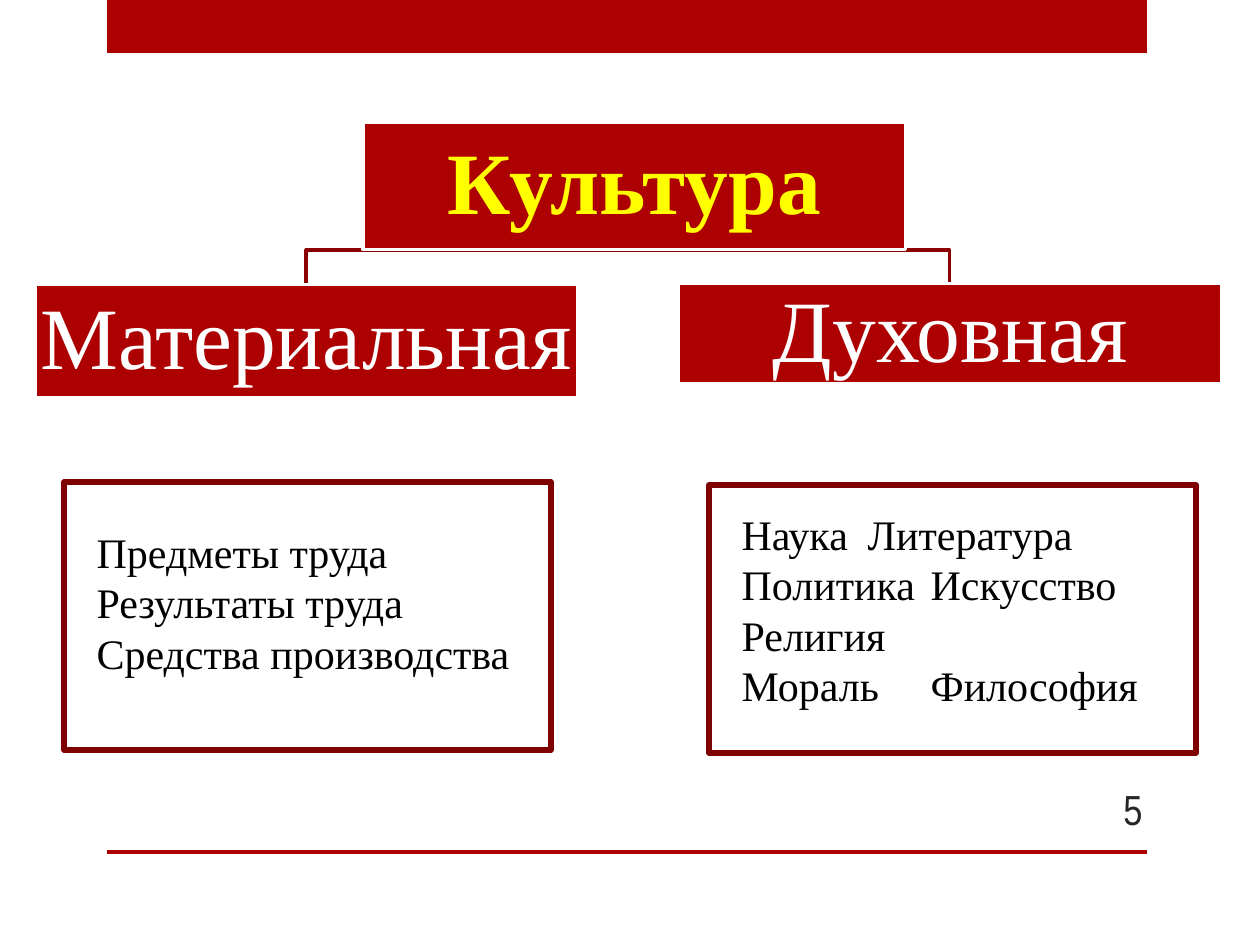
from dataclasses import dataclass
from typing import Optional

import lxml.etree
import pptx
import pptx.dml.color
import pptx.enum.shapes
import pptx.enum.text
import pptx.oxml.ns
import pptx.util

EMU_PER_PX = 914400 / 126
SERIF = "Times New Roman"
COLORS = {
    "red": "AD0101",
    "branch": "8B0101",
    "frame": "800101",
    "white": "FFFFFF",
    "yellow": "FFFF00",
    "black": "000000",
    "number": "262626",
}
ALIGN = pptx.enum.text.PP_ALIGN
ANCHOR = pptx.enum.text.MSO_ANCHOR


@dataclass(frozen=True)
class Box:
    left: int
    top: int
    width: int
    height: int

    @property
    def center(self) -> int:
        return self.left + self.width // 2

    @property
    def bottom(self) -> int:
        return self.top + self.height

    def emu(self) -> list[int]:
        return [px(v) for v in (self.left, self.top, self.width, self.height)]


@dataclass(frozen=True)
class Kind:
    """One kind of culture: its heading, the frame below and the list inside."""
    name: str
    heading: Box
    frame: Box
    listing: Box
    lines: tuple[str, ...]
    tabs: tuple[int, ...]  # one per line, 0 for a line without a tab


def px(value: int) -> int:
    return round(value * EMU_PER_PX)


def rgb(name: str) -> pptx.dml.color.RGBColor:
    return pptx.dml.color.RGBColor.from_string(COLORS[name])


def place(shape, box: Box) -> None:
    shape.left, shape.top, shape.width, shape.height = box.emu()


def paint(shape, fill: Optional[str] = None, line: Optional[str] = None,
          width: float = 1.75) -> None:
    if fill:
        shape.fill.solid()
        shape.fill.fore_color.rgb = rgb(fill)
    else:
        shape.fill.background()
    if line:
        shape.line.color.rgb = rgb(line)
        shape.line.width = pptx.util.Pt(width)
    else:
        shape.line.fill.background()


def add_rect(slide, box: Box, **look):
    rect = slide.shapes.add_shape(pptx.enum.shapes.MSO_SHAPE.RECTANGLE, *box.emu())
    rect.shadow.inherit = False
    paint(rect, **look)
    return rect


def write(shape, text: str, *, size: int = 24, font: str = SERIF, color: str = "black",
          bold: bool = False, align=ALIGN.LEFT, anchor=ANCHOR.TOP, spacing: float = 1.0,
          inset: Optional[int] = None, wrap: bool = True) -> None:
    frame = shape.text_frame
    frame.text = text
    frame.word_wrap = wrap
    frame.auto_size = pptx.enum.text.MSO_AUTO_SIZE.NONE
    frame.vertical_anchor = anchor
    if inset is not None:
        frame.margin_left = frame.margin_right = px(inset)
        frame.margin_top = frame.margin_bottom = px(inset)
    for paragraph in frame.paragraphs:
        paragraph.alignment = align
        paragraph.line_spacing = spacing
        paragraph.space_before = pptx.util.Pt(0)
        for run in paragraph.runs:
            run.font.size = pptx.util.Pt(size)
            run.font.name = font
            run.font.bold = bold
            run.font.color.rgb = rgb(color)


def write_heading(shape, text: str, color: str = "white", bold: bool = False) -> None:
    write(shape, text, size=50, color=color, bold=bold, align=ALIGN.CENTER,
          anchor=ANCHOR.MIDDLE, spacing=0.9, inset=4, wrap=False)


def set_plain_list(shape, tabs: tuple[int, ...]) -> None:
    """Remove bullets and indents, and set the tab stop of each line."""
    qn = pptx.oxml.ns.qn
    for paragraph, tab in zip(shape.text_frame.paragraphs, tabs):
        props = paragraph._p.get_or_add_pPr()
        props.set("marL", "0")
        props.set("indent", "0")
        lxml.etree.SubElement(props, qn("a:buNone"))
        if tab:
            stops = lxml.etree.SubElement(props, qn("a:tabLst"))
            lxml.etree.SubElement(stops, qn("a:tab"), pos=str(px(tab)), algn="l")


def add_branch(slide, parent: Box, child: Box) -> None:
    builder = slide.shapes.build_freeform(parent.center, parent.bottom, scale=EMU_PER_PX)
    builder.add_line_segments(
        [(child.center, parent.bottom), (child.center, child.top)], close=False)
    branch = builder.convert_to_shape()
    branch.shadow.inherit = False
    paint(branch, line="branch")


ROOT = Box(363, 122, 543, 128)
KINDS = (
    Kind("Материальная", Box(35, 285, 543, 113), Box(64, 482, 487, 268),
         Box(84, 520, 442, 165),
         ("Предметы труда", "Результаты труда", "Средства производства"), (0, 0, 0)),
    Kind("Духовная", Box(679, 284, 543, 100), Box(709, 485, 487, 268),
         Box(729, 502, 448, 217),
         ("Наука\tЛитература", "Политика\tИскусство", "Религия", "Мораль\tФилософия"),
         (211, 226, 0, 211)),
)


def main() -> None:
    deck = pptx.Presentation()
    deck.slide_width, deck.slide_height = px(1260), px(945)
    slide = deck.slides.add_slide(deck.slide_layouts[3])  # title and two lists
    title, *lists = slide.placeholders

    # Bands and slide number
    add_rect(slide, Box(107, 0, 1040, 53), fill="red")
    add_rect(slide, Box(107, 850, 1040, 4), fill="red")
    number = slide.shapes.add_textbox(*Box(1050, 784, 105, 50).emu())
    write(number, "5", font="Arial Narrow", color="number", align=ALIGN.RIGHT,
          anchor=ANCHOR.MIDDLE)

    # Branches lie under the title
    for kind in KINDS:
        add_branch(slide, ROOT, kind.heading)
    slide.shapes.element.append(title.element)
    place(title, ROOT)
    paint(title, fill="red", line="white")
    write_heading(title, "Культура", color="yellow", bold=True)

    # Headings, frames and lists
    for kind, listing in zip(KINDS, lists):
        heading = add_rect(slide, kind.heading, fill="red", line="white")
        write_heading(heading, kind.name)
        add_rect(slide, kind.frame, line="frame", width=3)
        slide.shapes.element.append(listing.element)
        place(listing, kind.listing)
        write(listing, "\n".join(kind.lines))
        set_plain_list(listing, kind.tabs)

    deck.save("out.pptx")


if __name__ == "__main__":
    main()
